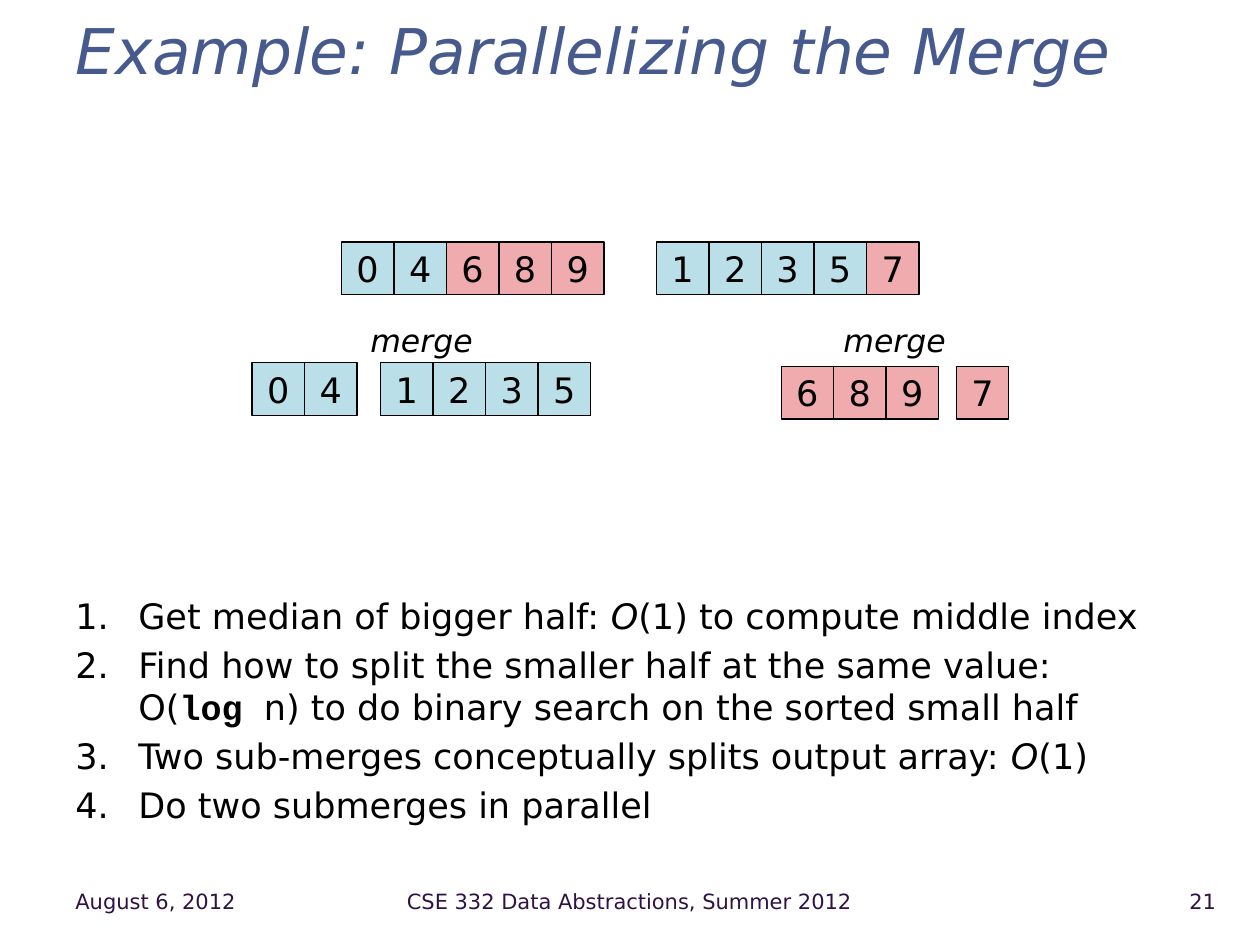
import pptx
import pptx.util
import pptx.dml.color
import pptx.enum.shapes
import pptx.enum.text
import pptx.oxml
import pptx.oxml.ns

Inches, Pt = pptx.util.Inches, pptx.util.Pt
RGBColor = pptx.dml.color.RGBColor
ALIGN = pptx.enum.text.PP_ALIGN
ANCHOR = pptx.enum.text.MSO_ANCHOR

TITLE_BLUE = RGBColor(0x47, 0x5A, 0x8D)
FOOTER_PURPLE = RGBColor(0x2F, 0x13, 0x43)
BLACK = RGBColor(0, 0, 0)
LOW_BLUE = RGBColor(0xBA, 0xDF, 0xE8)
HIGH_PINK = RGBColor(0xEF, 0xAB, 0xAD)

deck = pptx.Presentation()
deck.slide_width, deck.slide_height = Inches(10), Inches(7.5)
slide = deck.slides.add_slide(deck.slide_layouts[6])


def add_run(paragraph, text, color, size, **extra):
    run = paragraph.add_run()
    run.text = text
    run.font.color.rgb = color
    font_format = {"name": "DejaVu Sans", "size": Pt(size), **extra}
    for attribute, value in font_format.items():
        setattr(run.font, attribute, value)


def add_text(box, text, color, size, align=ALIGN.LEFT, anchor=ANCHOR.MIDDLE, **extra):
    frame = slide.shapes.add_textbox(*map(Inches, box)).text_frame
    frame.word_wrap = True
    frame.vertical_anchor = anchor
    frame.paragraphs[0].alignment = align
    add_run(frame.paragraphs[0], text, color, size, **extra)


# Title
add_text((0.5, 0.13, 9.25, 0.53), "Example: Parallelizing the Merge", TITLE_BLUE, 36, italic=True)

# Footer: date, course, slide number
for left, width, text, align in [
    (0.5, 1.75, "August 6, 2012", ALIGN.LEFT),
    (2.32, 5.35, "CSE 332 Data Abstractions, Summer 2012", ALIGN.CENTER),
    (8.89, 0.86, "21", ALIGN.RIGHT),
]:
    add_text((left, 6.95, width, 0.4), text, FOOTER_PURPLE, 12, align)

# Numbered steps; each step is a list of (text, format), None is a line break
ITALIC = {"italic": True}
CODE = {"name": "Courier New", "bold": True}
steps = [
    [("Get median of bigger half: ", {}), ("O", ITALIC), ("(1) to compute middle index", {})],
    [("Find how to split the smaller half at the same value: ", {}), None,
     ("O(", {}), ("log ", CODE), ("n) to do binary search on the sorted small half", {})],
    [("Two sub-merges conceptually splits output array: ", {}), ("O", ITALIC), ("(1)", {})],
    [("Do two submerges in parallel", {})],
]
step_frame = slide.shapes.add_textbox(Inches(0.5), Inches(4.67), Inches(9.5), Inches(2.08)).text_frame
step_frame.word_wrap = True
for index, step in enumerate(steps):
    paragraph = step_frame.add_paragraph() if index else step_frame.paragraphs[0]
    paragraph.space_before = Pt(4)
    properties = paragraph._p.get_or_add_pPr()
    properties.set("marL", str(Inches(0.5)))
    properties.set("indent", str(Inches(-0.5)))
    numbering = pptx.oxml.parse_xml(
        f'<a:buAutoNum {pptx.oxml.ns.nsdecls("a")} type="arabicPeriod"/>')
    properties.append(numbering)
    for part in step:
        if part is None:
            paragraph.add_line_break()
        else:
            add_run(paragraph, part[0], BLACK, 20, **part[1])

# Sorted arrays: values below the median 6 are blue, the rest pink
CELL = 5 / 12
MEDIAN = 6
arrays = [
    (2.71, 1.92, [0, 4, 6, 8, 9]),
    (5.21, 1.92, [1, 2, 3, 5, 7]),
    (2, 2.88, [0, 4]),
    (3.02, 2.88, [1, 2, 3, 5]),
    (6.2, 2.91, [6, 8, 9]),
    (7.59, 2.91, [7]),
]
for left, top, values in arrays:
    for position, value in enumerate(values):
        cell = slide.shapes.add_shape(
            pptx.enum.shapes.MSO_SHAPE.RECTANGLE,
            Inches(left + position * CELL), Inches(top), Inches(CELL), Inches(CELL))
        cell.shadow.inherit = False
        cell.fill.solid()
        cell.fill.fore_color.rgb = LOW_BLUE if value < MEDIAN else HIGH_PINK
        cell.line.color.rgb = BLACK
        cell.line.width = Pt(0.75)
        cell.text_frame.word_wrap = False
        cell.text_frame.vertical_anchor = ANCHOR.MIDDLE
        cell.text_frame.paragraphs[0].alignment = ALIGN.CENTER
        add_run(cell.text_frame.paragraphs[0], str(value), BLACK, 20)

# Labels over the two sub-merges
for left, width in [(2, 2.69), (6.2, 1.8)]:
    add_text((left, 2.5, width, 0.4), "merge", BLACK, 18, ALIGN.CENTER, ANCHOR.TOP, italic=True)

deck.save("out.pptx")
